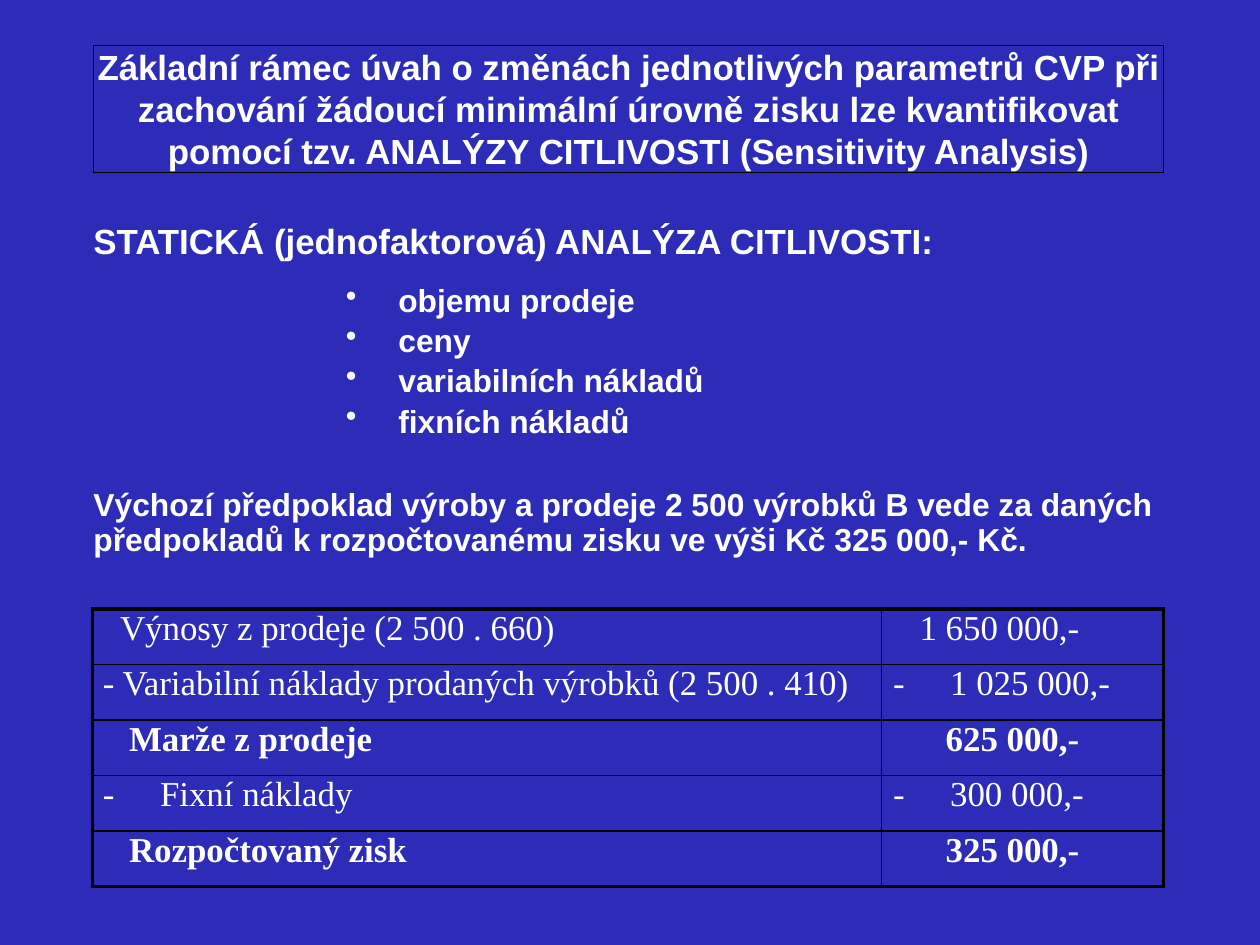
from lxml import etree
from pptx import Presentation
from pptx.dml.color import RGBColor
from pptx.enum import text
from pptx.oxml.ns import qn
from pptx.util import Cm, Pt

BLUE, WHITE, BLACK = "2C2CB8", "FFFFFF", "000000"

HEADING = ("Základní rámec úvah o změnách jednotlivých parametrů CVP při "
           "zachování žádoucí minimální úrovně zisku lze kvantifikovat "
           "pomocí tzv. ANALÝZY CITLIVOSTI (Sensitivity Analysis)")
SUBHEADING = "STATICKÁ (jednofaktorová) ANALÝZA CITLIVOSTI:"
FACTORS = ["objemu prodeje", "ceny", "variabilních nákladů", "fixních nákladů"]
ASSUMPTION = ("Výchozí předpoklad výroby a prodeje 2 500 výrobků B vede za "
              "daných předpokladů k rozpočtovanému zisku ve výši Kč 325 000,- Kč.")

# Each cell: text, left indent in cm, tab stop in cm; each row ends with bold
ROWS = [
    (("Výnosy z prodeje (2 500 . 660)", 0.61, None), ("1 650 000,-", 0.84, None), False),
    (("- Variabilní náklady prodaných výrobků (2 500 . 410)", 0.23, None),
     ("-\t1 025 000,-", 0.25, 0.91), False),
    (("Marže z prodeje", 0.81, None), ("625 000,-", 1.42, None), True),
    (("-\tFixní náklady", 0.23, 0.89), ("-\t300 000,-", 0.25, 1.5), False),
    (("Rozpočtovaný zisk", 0.81, None), ("325 000,-", 1.42, None), True),
]


def rgb(value):
    return RGBColor.from_string(value)


def add_xml(parent, tag, **attrs):
    return etree.SubElement(parent, qn(tag), attrs)


def write(p, content, size, font="Arial", bold=True):
    p.text = content
    for r in p.runs:
        r.font.name, r.font.size, r.font.bold = font, Pt(size), bold
        r.font.color.rgb = rgb(WHITE)


def indent(p, left, first=0):
    pPr = p._p.get_or_add_pPr()
    pPr.set("marL", str(Cm(left)))
    pPr.set("indent", str(Cm(first)))
    return pPr


def prepare_frame(tf):
    tf.word_wrap = True
    tf.auto_size = text.MSO_AUTO_SIZE.NONE
    tf.vertical_anchor = text.MSO_ANCHOR.TOP
    tf.margin_left = tf.margin_top = tf.margin_right = tf.margin_bottom = 0


def set_border(cell, side, width):
    ln = add_xml(cell._tc.get_or_add_tcPr(), f"a:ln{side}", w=str(Pt(width)))
    add_xml(add_xml(ln, "a:solidFill"), "a:srgbClr", val=BLACK)


def add_title(s, x, y, w, h):
    sp = s.shapes.title
    sp.left, sp.top, sp.width, sp.height = Cm(x), Cm(y), Cm(w), Cm(h)
    sp.fill.solid()
    sp.fill.fore_color.rgb = rgb(BLUE)
    sp.line.color.rgb = rgb(BLACK)
    sp.line.width = Pt(0.75)
    prepare_frame(sp.text_frame)
    p = sp.text_frame.paragraphs[0]
    write(p, HEADING, 22)
    p.alignment = text.PP_ALIGN.CENTER
    p.line_spacing = 1.0
    p.space_before = Pt(0)


def add_body(s, x, y, w, h):
    tf = s.shapes.add_textbox(Cm(x), Cm(y), Cm(w), Cm(h)).text_frame
    prepare_frame(tf)
    write(tf.paragraphs[0], SUBHEADING, 22)

    # Bulleted factors
    for i, factor in enumerate(FACTORS):
        p = tf.add_paragraph()
        write(p, factor, 20)
        p.space_before = Pt(1.3 if i else 12.3)
        pPr = indent(p, 6.78, -1.17)
        add_xml(add_xml(pPr, "a:buClr"), "a:srgbClr", val=WHITE)
        add_xml(pPr, "a:buChar", char="•")

    # Starting assumption
    p = tf.add_paragraph()
    write(p, ASSUMPTION, 20)
    p.space_before = Pt(30)
    p.line_spacing = Pt(22.3)


def add_profit_table(s, x, y, w, h):
    label_width = 17.55
    table = s.shapes.add_table(len(ROWS), 2, Cm(x), Cm(y), Cm(w), Cm(h)).table
    table.first_row = table.horz_banding = False
    table.columns[0].width = Cm(label_width)
    table.columns[1].width = Cm(w - label_width)
    for i, (label, amount, bold) in enumerate(ROWS):
        table.rows[i].height = Cm(h / len(ROWS))
        for j, (content, left, tab) in enumerate((label, amount)):
            cell = table.cell(i, j)
            cell.margin_left = cell.margin_top = 0
            cell.margin_right = cell.margin_bottom = 0
            p = cell.text_frame.paragraphs[0]
            write(p, content, 22, "Times New Roman", bold)
            pPr = indent(p, left)
            if tab:
                add_xml(add_xml(pPr, "a:tabLst"), "a:tab", pos=str(Cm(tab)), algn="l")
            # Thick outer frame, thin inner lines
            outer = {"L": j == 0, "R": j == 1, "T": i == 0, "B": i == len(ROWS) - 1}
            for side, is_outer in outer.items():
                set_border(cell, side, 2.25 if is_outer else 1)
            cell.fill.solid()
            cell.fill.fore_color.rgb = rgb(BLUE)


def main():
    prs = Presentation()
    prs.slide_width, prs.slide_height = Cm(28.02), Cm(21.01)
    s = prs.slides.add_slide(prs.slide_layouts[5])
    s.background.fill.solid()
    s.background.fill.fore_color.rgb = rgb(BLUE)
    add_title(s, 2.08, 1.02, 23.8, 2.82)
    add_body(s, 2.08, 4.88, 23.6, 7.54)
    add_profit_table(s, 2.06, 13.54, 23.82, 6.17)
    prs.save("out.pptx")


if __name__ == "__main__":
    main()
